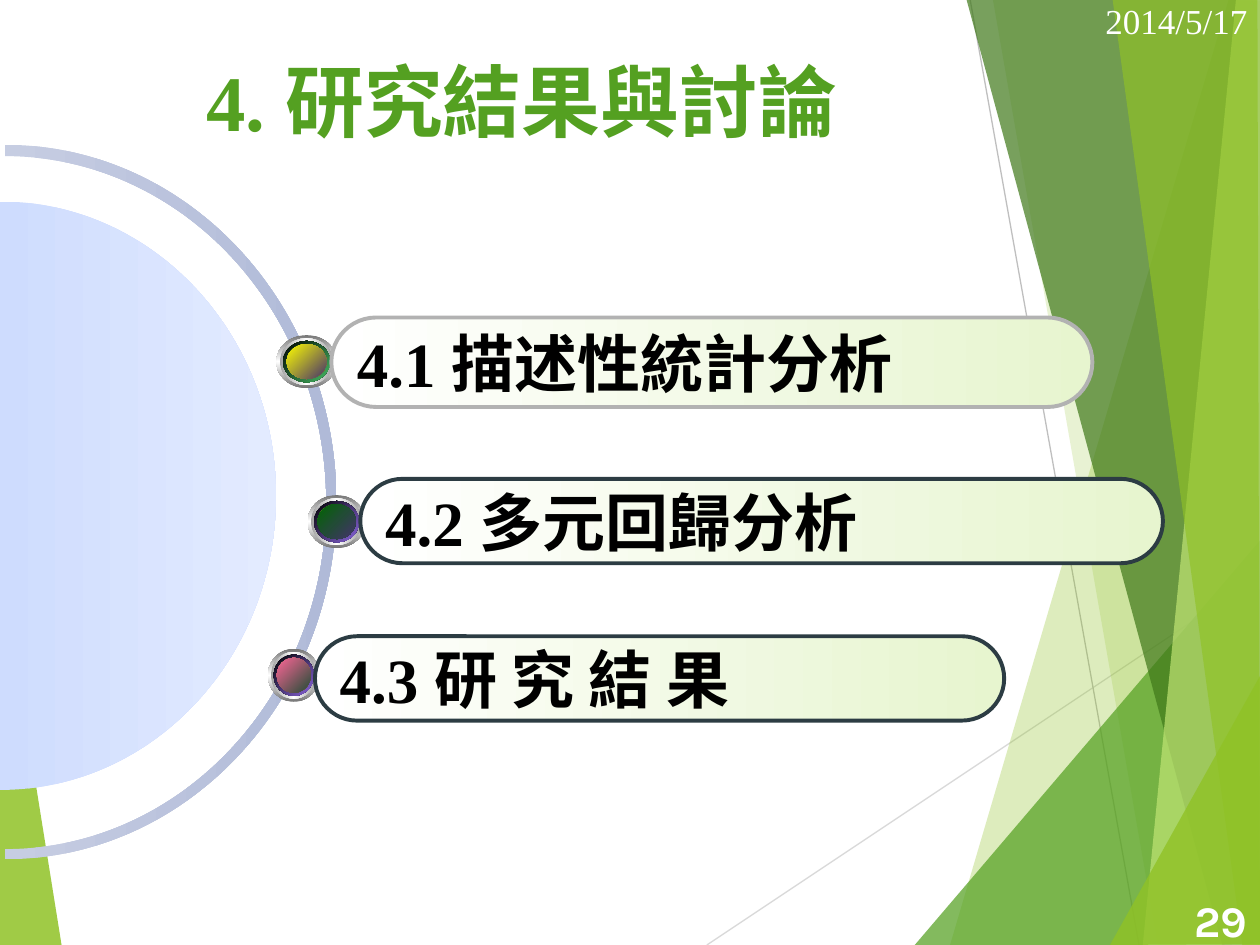
from lxml import etree
from pptx import Presentation
from pptx.dml.color import RGBColor
from pptx.enum.shapes import MSO_CONNECTOR, MSO_SHAPE
from pptx.enum.text import MSO_ANCHOR, PP_ALIGN
from pptx.oxml.ns import qn
from pptx.util import Inches, Pt

OVAL, PILL, STRAIGHT = MSO_SHAPE.OVAL, MSO_SHAPE.ROUNDED_RECTANGLE, MSO_CONNECTOR.STRAIGHT
LEFT, CENTER, RIGHT = PP_ALIGN.LEFT, PP_ALIGN.CENTER, PP_ALIGN.RIGHT
MIDDLE = MSO_ANCHOR.MIDDLE
WIDTH, HEIGHT = Inches(10), Inches(7.5)
SERIF, CJK, SANS = "Times New Roman", "Noto Sans CJK SC", "Karla"

color = RGBColor.from_string
WHITE, BLACK = color("FFFFFF"), color("000000")
LIME, GREEN, FOREST, PALE = color("90C226"), color("54A021"), color("3F7819"), color("C0E474")
LEAF, OLIVE, MINT = color("99CA3C"), color("759B2E"), color("E7F5CF")
GRAY, STEEL, SILVER, SLATE = color("767676"), color("A2A2A2"), color("B2B2B2"), color("2C3C43")
RING_COLORS = [color("C6CDE2"), color("B0BAD8")]
DISC_COLORS = [color("CEDCFE"), color("E3EBFF")]
RAY_BRIGHT, RAY_DIM = color("D9D9D9"), color("BFBFBF")
JADE, VIOLET, YELLOW, PURPLE = color("48BE67"), color("8D67E1"), color("FFFF00"), color("45326D")
PINK, PINE, DEEP_GREEN = color("FF6699"), color("224C36"), color("006600")

FULL_PAGE = (0, 0, 100, 100)
HALF_ELLIPSE = [(0, 0), (55.2, 0), (100, 22.4), (100, 50), (100, 77.6), (55.2, 100), (0, 100)]
RAYS = [((56.1, 100), (100.1, 60.9), RAY_BRIGHT), ((77, 0), (90.4, 100), RAY_DIM)]
FACETS = [
    ([(-0.1, 58.5), (4.9, 100.1), (-0.1, 100)], LIME, 85),
    ([(97.5, 0), (75.4, 100), (100.2, 100.1), (100.1, 0.1)], LIME, 30),
    ([(78.8, -0.1), (91.9, 100), (100.1, 100), (100.1, -0.1)], LIME, 20),
    ([(72.6, 100), (100, 57.2), (100.1, 100)], GREEN, 72),
    ([(76.7, -0.1), (97, 100), (100.1, 99.9), (100.1, -0.1)], FOREST, 70),
    ([(98.1, -0.1), (90.7, 100), (100.1, 100), (100, -0.1)], PALE, 70),
    ([(88.3, -0.1), (98.6, 100), (100, 100), (99.8, -0.1)], LIME, 65),
    ([(88.1, 100), (100.1, 71.3), (100.1, 99.9)], LIME, 80),
]
TOPICS = [
    ("4.1 ", "描述性統計分析", (26.3, 33.6, 60.4, 9.47), SILVER, (4.8, 1.87), JADE,
     [YELLOW, PURPLE]),
    ("4.3 ", "研 究 結 果", (25, 67.33, 54.7, 8.93), SLATE, (4.1, 1.33), VIOLET, [PINK, PINE]),
    ("4.2 ", "多元回歸分析", (28.6, 50.67, 63.7, 8.93), SLATE, (4.6, 1.73), VIOLET,
     [DEEP_GREEN, PINE, PURPLE]),
]


def scale(box):
    """Turn a box in percent of the slide into lengths."""
    left, top, width, height = box
    return [round(share * side / 100) for share, side in
            ((left, WIDTH), (top, HEIGHT), (width, WIDTH), (height, HEIGHT))]


def within(box, x, y):
    """Return the length pair for a point in percent of a box."""
    left, top, width, height = scale(box)
    return round(left + width * x / 100), round(top + height * y / 100)


def shade(shape, colors, angle=0):
    """Fill a shape with evenly spaced gradient stops, clockwise by angle."""
    shape.fill.gradient()
    shape.fill.gradient_angle = -angle % 360
    stops = shape._element.spPr.find(qn("a:gradFill")).find(qn("a:gsLst"))
    stops[:] = []
    for index, tone in enumerate(colors):
        position = round(100000 * index / (len(colors) - 1))
        stop = etree.SubElement(stops, qn("a:gs"), pos=str(position))
        etree.SubElement(stop, qn("a:srgbClr"), val=str(tone))


def add_outline(page, points):
    """Add a closed, unlined polygon through points."""
    builder = page.shapes.build_freeform(*points[0])
    builder.add_line_segments(points[1:])
    shape = builder.convert_to_shape()
    shape.shadow.inherit = False
    shape.line.fill.background()
    return shape


def bend(shape, starts):
    """Merge three segments from each start index into one Bezier curve."""
    segments = list(shape._element.iter(qn("a:lnTo")))
    for start in starts:
        curve = etree.Element(qn("a:cubicBezTo"))
        segments[start].addprevious(curve)
        for segment in segments[start:start + 3]:
            curve.append(segment[0])
            segment.getparent().remove(segment)


def add_preset(page, kind, box):
    """Add an unlined preset shape in a box."""
    shape = page.shapes.add_shape(kind, *scale(box))
    shape.shadow.inherit = False
    shape.line.fill.background()
    return shape


def write(frame, spans, align):
    """Write spans of text with their format values on one line."""
    frame.word_wrap = True
    frame.vertical_anchor = MIDDLE
    para = frame.paragraphs[0]
    para.alignment = align
    for text, values in spans:
        span = para.add_run()
        span.text = text
        for name, value in values.items():
            if name == "color":
                span.font.color.rgb = value
            else:
                setattr(span.font, name, value)
        etree.SubElement(span.font._element, qn("a:ea"), typeface=CJK)


def add_facet(page, box, corners, tone, opacity):
    """Draw one translucent facet."""
    facet = add_outline(page, [within(box, *corner) for corner in corners])
    facet.fill.solid()
    facet.fill.fore_color.rgb = tone
    tint = facet._element.spPr.find(qn("a:solidFill"))[0]
    etree.SubElement(tint, qn("a:alpha"), val=str(opacity * 1000))


def add_backdrop(page, box):
    """Draw the thin rays and the translucent facets."""
    left_facet, *right_facets = FACETS
    add_facet(page, box, *left_facet)
    for start, end, tone in RAYS:
        ray = page.shapes.add_connector(STRAIGHT, *within(box, *start), *within(box, *end))
        ray.line.color.rgb = tone
        ray.line.width = Pt(0.75)
        etree.SubElement(ray._element.spPr, qn("a:effectLst"))
    for facet in right_facets:
        add_facet(page, box, *facet)


def half_ellipse(box):
    """Return the Bezier points of a right half ellipse filling a box."""
    return [within(box, *point) for point in HALF_ELLIPSE]


def add_dial(page, ring, hole, disc):
    """Draw the half ring and the half disc at the left edge."""
    band = add_outline(page, half_ellipse(ring) + half_ellipse(hole)[::-1])
    bend(band, (0, 3, 7, 10))
    shade(band, RING_COLORS)
    core = add_outline(page, half_ellipse(disc))
    bend(core, (0, 3))
    shade(core, DISC_COLORS)


def add_bullet(page, box, rim, core):
    """Draw a glossy bullet from nested ovals."""
    left, top, width, height = box
    layers = [
        (0, [GRAY, WHITE, GRAY], 90),
        (0.06, [STEEL, WHITE, STEEL], 0),
        (0.11, [WHITE, LEAF, WHITE], 45),
        (0.11, [BLACK, rim], 45),
        (0.17, [OLIVE, LEAF, OLIVE], 315),
        (0.17, core, 45),
    ]
    for inset, colors, angle in layers:
        size = 1 - 2 * inset
        oval = (left + inset * width, top + inset * height, size * width, size * height)
        shade(add_preset(page, OVAL, oval), colors, angle)


def add_topic(page, number, label, box, edge, bullet, rim, core):
    """Draw a topic pill with its bullet tucked under the left end."""
    left, top, _, _ = box
    bullet_width, drop = bullet
    add_bullet(page, (left - 0.91 * bullet_width, top + drop, bullet_width, 5.6), rim, core)
    pill = add_preset(page, PILL, box)
    pill.adjustments[0] = 0.5
    shade(pill, [WHITE, MINT])
    pill.line.color.rgb = edge
    pill.line.width = Pt(2.25)
    style = {"name": SERIF, "size": Pt(36), "bold": True, "color": BLACK}
    write(pill.text_frame, [(number, style), (label, {**style, "name": CJK})], LEFT)


def add_title(page, box):
    """Place and fill the title placeholder."""
    title = page.shapes.title
    for name, value in zip(("left", "top", "width", "height"), scale(box)):
        setattr(title, name, value)
    style = {"name": SERIF, "size": Pt(45), "bold": True, "color": GREEN}
    write(title.text_frame, [("4. 研究結果與討論", style)], CENTER)


def add_corner_text(page, box, text, values):
    """Write a short white text at the right edge."""
    frame = page.shapes.add_textbox(*scale(box)).text_frame
    write(frame, [(text, {**values, "color": WHITE})], RIGHT)


def main():
    """Build the deck."""
    deck = Presentation()
    deck.slide_width, deck.slide_height = WIDTH, HEIGHT
    page = deck.slides.add_slide(deck.slide_layouts[5])
    add_backdrop(page, FULL_PAGE)
    add_title(page, (6.7, 4.8, 69.4, 11.47))
    add_corner_text(page, (92.5, 94.67, 7.5, 5.33), "29",
                    {"name": SANS, "size": Pt(25), "bold": True})
    add_dial(page, ring=(0.4, 15.33, 26.3, 75.6), hole=(0.4, 16.53, 25.5, 73.33),
             disc=(0, 21.33, 21.9, 62.27))
    for topic in TOPICS:
        add_topic(page, *topic)
    add_corner_text(page, (86.7, -0.53, 13.3, 5.33), "2014/5/17",
                    {"name": SERIF, "size": Pt(20)})
    deck.save("out.pptx")


if __name__ == "__main__":
    main()
